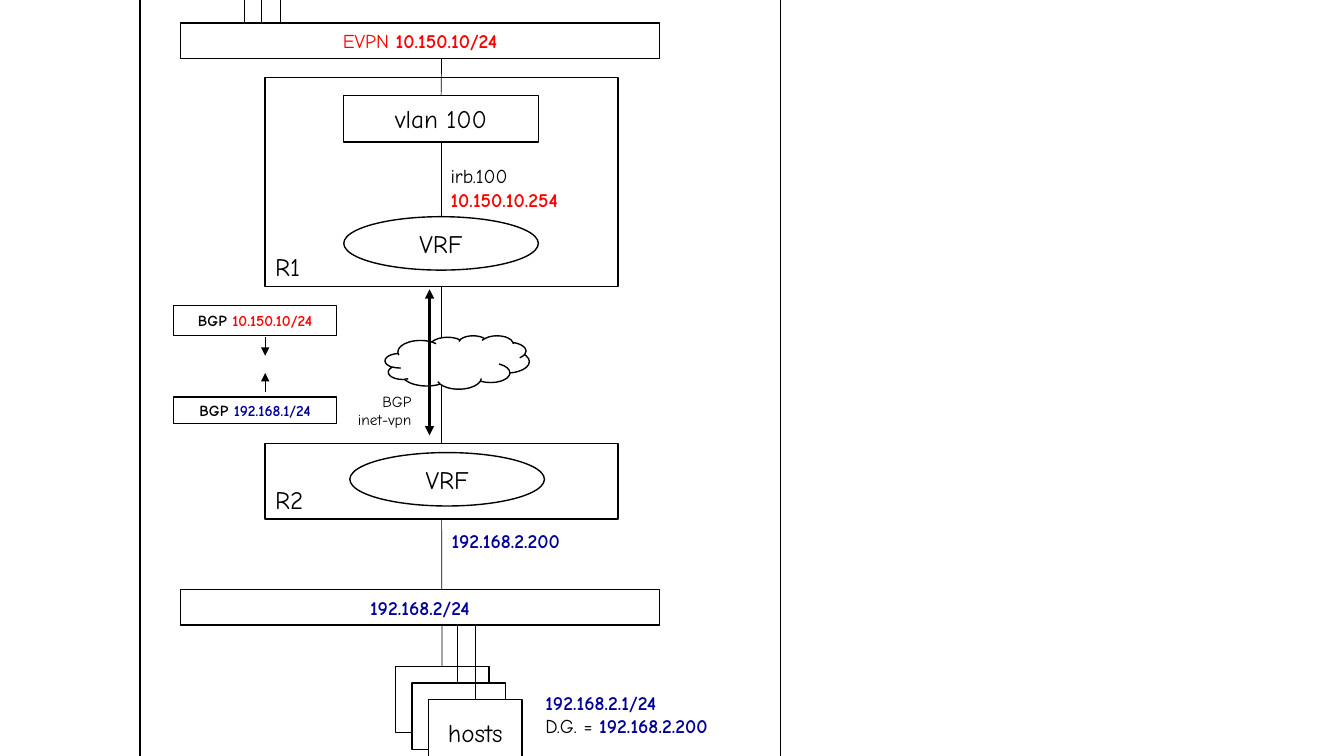
from lxml import etree
from pptx import Presentation, util as u
from pptx.dml.color import RGBColor
from pptx.enum import shapes, text
from pptx.oxml.ns import qn

COLORS = {"white": "FFFFFF", "black": "000000", "red": "FF0000", "blue": "000099"}
FONT = "Comic Neue"
LEFT, CENTER, RIGHT = text.PP_ALIGN.LEFT, text.PP_ALIGN.CENTER, text.PP_ALIGN.RIGHT
TOP, MIDDLE, BOTTOM = (text.MSO_ANCHOR.TOP, text.MSO_ANCHOR.MIDDLE,
                       text.MSO_ANCHOR.BOTTOM)
RECT, OVAL, CLOUD = (shapes.MSO_SHAPE.RECTANGLE, shapes.MSO_SHAPE.OVAL,
                     shapes.MSO_SHAPE.CLOUD)

deck = Presentation()
deck.slide_width, deck.slide_height = u.Inches(13.33), u.Inches(7.5)
page = deck.slides.add_slide(deck.slide_layouts[6])

# The slide is a grid of 1333 columns by 750 rows; boxes are (left, top, width, height)
COLUMN, ROW = deck.slide_width / 1333, deck.slide_height / 750


def color(name):
    return RGBColor.from_string(COLORS[name])


def within(box, left, top, width, height):
    return box[0] + left, box[1] + top, width, height


def scaled(box):
    return [round(n * unit) for n, unit in zip(box, (COLUMN, ROW) * 2)]


def write(box, lines, size, align=LEFT, anchor=TOP, wrap=True):
    """Each line is a list of (words, color, bold) spans."""
    frame = box.text_frame
    frame.word_wrap, frame.vertical_anchor = wrap, anchor
    for number, spans in enumerate(lines):
        para = frame.add_paragraph() if number else frame.paragraphs[0]
        para.alignment = align
        para.font.name, para.font.size = FONT, u.Pt(size)
        for words, tint, bold in spans:
            span = para.add_run()
            span.text = words
            span.font.color.rgb, span.font.bold = color(tint), bold


def node(box, lines=(), size=18, kind=RECT, align=CENTER, anchor=MIDDLE,
         outlined=True, wrap=True):
    shape = page.shapes.add_shape(kind, *scaled(box))
    shape.shadow.inherit = False
    shape.fill.solid()
    shape.fill.fore_color.rgb = color("white")
    if outlined:
        shape.line.color.rgb, shape.line.width = color("black"), u.Pt(1)
    else:
        shape.line.fill.background()
    write(shape, lines, size, align, anchor, wrap)
    return shape


def label(box, *lines):
    write(page.shapes.add_textbox(*scaled(box)), lines, 14)


def link(start, end, width=0.5, heads=(), begin=None, finish=None):
    """Draw a line; begin and finish are the nodes whose bottom and top it joins."""
    line = page.shapes.add_connector(shapes.MSO_CONNECTOR.STRAIGHT,
                                     *scaled(start + end))
    line.line.color.rgb, line.line.width = color("black"), u.Pt(width)
    for head in heads:
        etree.SubElement(line.line._get_or_add_ln(), qn("a:" + head), type="triangle")
    etree.SubElement(line._element.spPr, qn("a:effectLst"))
    if begin is not None:
        line.begin_connect(begin, 2)
    if finish is not None:
        line.end_connect(finish, 0)


def plain(words):
    return [[(words, "black", False)]]


def router(box, name, vrf_left, vrf_top):
    shell = node(box, plain(name), align=LEFT, anchor=BOTTOM)
    vrf = node(within(box, vrf_left, vrf_top, 193, 53), plain("VRF"), kind=OVAL)
    return shell, vrf


def evpn_segment(box):
    left, top = box[:2]
    for offset, rise in ((63, 57), (80, 57), (99, 35)):
        link((left + offset, top - rise), (left + offset, top))
    node(box, [[("EVPN ", "red", False), ("10.150.10/24", "red", True)]], 14)


def first_router(box):
    left, top, width, _ = box
    middle = left + width / 2
    shell, vrf = router(box, "R1", 78, 138)
    vlan = node(within(box, 78, 18, 193, 46), plain("vlan 100"))
    link((middle, top + 64), (middle, top + 138), begin=vlan, finish=vrf)
    link((middle, top - 19), (middle, top + 18), finish=vlan)
    label(within(box, 174, 81, 165, 57),
          [("irb.100", "black", False)], [("10.150.10.254", "red", True)])
    return shell


def backbone(box, upper, lower):
    left, top, width, height = box
    middle = left + width / 2
    link((middle, top), (middle, top + height), begin=upper, finish=lower)
    node(within(box, 119, 49, 143, 53), kind=CLOUD)
    link((left + 163, top + 3), (left + 163, top + 148), 2.25, ("headEnd", "tailEnd"))
    node(within(box, 76, 100, 79, 47), plain("BGP") + plain("inet-vpn"), 11,
         align=RIGHT, anchor=TOP, outlined=False, wrap=False)


def bgp_routes(box):
    left, top, width, height = box
    arrow = left + 91
    routes = (("10.150.10/24", "red", 0, 30, 31, 50),
              ("192.168.1/24", "blue", height - 26, 26, height - 31, height - 50))
    for prefix, tint, offset, tall, start, end in routes:
        node(within(box, 0, offset, width, tall),
             [[("BGP ", "black", True), (prefix, tint, True)]], 11)
        link((arrow, top + start), (arrow, top + end), heads=("tailEnd",))


def host_stack(box):
    step = 16.5
    return [node(within(box, step * n, step * n, 93, 66), plain("hosts") if n == 2 else ())
            for n in range(3)]


def lan_segment(box, gateway, hosts):
    left, top, _, height = box
    link((left + 260, top - 70), (left + 260, top + 76), begin=gateway, finish=hosts[0])
    node(box, [[("192.168.2/24", "blue", True)]], 14)
    for offset, drop in ((275, 58), (292, 74)):
        link((left + offset, top + height), (left + offset, top + height + drop))
    label(within(box, 259, -65, 212, 34), [("192.168.2.200", "blue", True)])
    label(within(box, 352, 95, 241, 81), [("192.168.2.1/24", "blue", True)],
          [("D.G. = ", "black", False), ("192.168.2.200", "blue", True)])


# Frame around the network
node((139, -158, 635, 952))

# Upper network and its router
evpn_segment((179, 23, 475, 35))
r1 = first_router((263, 77, 350, 207))

# Lower router, joined through the backbone
r2, _ = router((263, 440, 350, 75), "R2", 84, 9)
backbone((263, 284, 350, 156), r1, r2)
bgp_routes((172, 303, 162, 117))

# Lower network with its hosts
lan_segment((179, 585, 475, 35), r2, host_stack((392, 661, 126, 99)))

deck.save("out.pptx")
